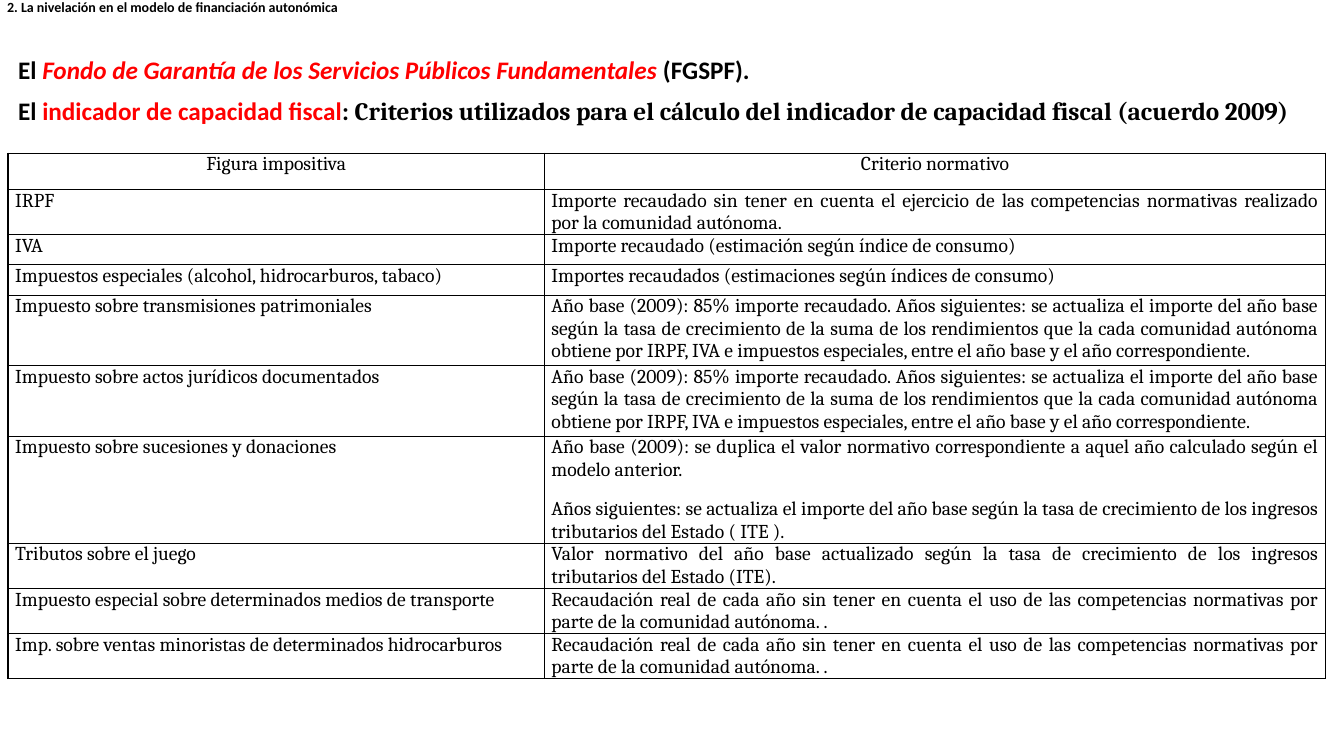
from lxml.etree import SubElement
from pptx import Presentation
from pptx.dml.color import RGBColor
from pptx.enum.text import MSO_ANCHOR, MSO_AUTO_SIZE, PP_ALIGN
from pptx.oxml.ns import qn
from pptx.util import Pt

PX = 9144  # 100 px to the inch
BLACK, RED = "000000", "FF0000"

COLUMN_WIDTHS = [532, 775]
ROW_HEIGHTS = [36, 43, 30, 30, 70, 70, 84, 44, 43, 32]
BASE_YEAR = (
    "Año base (2009): 85% importe recaudado. Años siguientes: se actualiza el importe "
    "del año base según la tasa de crecimiento de la suma de los rendimientos que la cada "
    "comunidad autónoma obtiene por IRPF, IVA e impuestos especiales, entre el año base "
    "y el año correspondiente."
)
ACTUAL_REVENUE = (
    "Recaudación real de cada año sin tener en cuenta el uso de las competencias "
    "normativas por parte de la comunidad autónoma. ."
)
# Each tax with the paragraphs of its criterion
TAX_CRITERIA = [
    ("Figura impositiva", ["Criterio normativo"]),
    ("IRPF", ["Importe recaudado sin tener en cuenta el ejercicio de las competencias "
              "normativas realizado por la comunidad autónoma."]),
    ("IVA", ["Importe recaudado (estimación según índice de consumo) "]),
    ("Impuestos especiales (alcohol, hidrocarburos, tabaco)",
     ["Importes recaudados (estimaciones según índices de consumo)"]),
    ("Impuesto sobre transmisiones patrimoniales", [BASE_YEAR]),
    ("Impuesto sobre actos jurídicos documentados", [BASE_YEAR]),
    ("Impuesto sobre sucesiones y donaciones",
     ["Año base (2009): se duplica el valor normativo correspondiente a aquel año "
      "calculado según el modelo anterior.",
      "Años siguientes: se actualiza el importe del año base según la tasa de crecimiento "
      "de los ingresos tributarios del Estado ( ITE )."]),
    ("Tributos sobre el juego",
     ["Valor normativo del año base actualizado según la tasa de crecimiento de los "
      "ingresos tributarios del Estado (ITE)."]),
    ("Impuesto especial sobre determinados medios de transporte", [ACTUAL_REVENUE]),
    ("Imp. sobre ventas minoristas de determinados hidrocarburos", [ACTUAL_REVENUE]),
]


def color(value):
    return RGBColor.from_string(value)


def add_text(paragraph, text, size=18, font="Calibri", fill=BLACK, bold=False, italic=False):
    run = paragraph.add_run()
    run.text = text
    run.font.size = Pt(size)
    run.font.name = font
    run.font.color.rgb = color(fill)
    run.font.bold = bold
    run.font.italic = italic


def format_paragraph(paragraph, align=PP_ALIGN.LEFT, before=0, after=0, line=1.0):
    paragraph.alignment = align
    paragraph.space_before = Pt(before)
    paragraph.space_after = Pt(after)
    paragraph.line_spacing = line


def place(shape, left, top, width, height, anchor):
    shape.left, shape.top = left * PX, top * PX
    shape.width, shape.height = width * PX, height * PX
    frame = shape.text_frame
    frame.word_wrap = True
    frame.auto_size = MSO_AUTO_SIZE.NONE
    frame.vertical_anchor = anchor
    return frame


def build_title(slide, *box):
    paragraph = place(slide.shapes.title, *box, MSO_ANCHOR.MIDDLE).paragraphs[0]
    format_paragraph(paragraph, line=0.9)
    add_text(paragraph, "2. La nivelación en el modelo de financiación autonómica",
             size=10, bold=True)


def build_headings(slide, *box):
    frame = place(slide.placeholders[1], *box, MSO_ANCHOR.TOP)
    headings = [
        [("El ", {}),
         ("Fondo de Garantía de los Servicios Públicos Fundamentales ",
          {"fill": RED, "italic": True}),
         ("(FGSPF).", {})],
        [("El ", {}),
         ("indicador de capacidad fiscal", {"fill": RED}),
         (": ", {}),
         ("Criterios utilizados para el cálculo del indicador de capacidad fiscal "
          "(acuerdo 2009)", {"font": "Cambria"})],
    ]
    for index, runs in enumerate(headings):
        paragraph = frame.add_paragraph() if index else frame.paragraphs[0]
        format_paragraph(paragraph, before=10, line=0.9)
        # No bullet and no hanging indent
        properties = paragraph._p.get_or_add_pPr()
        properties.set("marL", "0")
        properties.set("indent", "0")
        SubElement(properties, qn("a:buNone"))
        for text, style in runs:
            add_text(paragraph, text, bold=True, **style)


def add_borders(cell):
    properties = cell._tc.get_or_add_tcPr()
    for side in ("lnL", "lnR", "lnT", "lnB"):
        line = SubElement(properties, qn(f"a:{side}"), w=str(Pt(1)))
        fill = SubElement(line, qn("a:solidFill"))
        SubElement(fill, qn("a:srgbClr"), val=BLACK)


def fill_cell(cell, texts, align):
    cell.margin_left = cell.margin_right = 7 * PX
    cell.margin_top = cell.margin_bottom = 0
    add_borders(cell)
    cell.fill.background()
    for index, text in enumerate(texts):
        frame = cell.text_frame
        paragraph = frame.add_paragraph() if index else frame.paragraphs[0]
        format_paragraph(paragraph, align, before=6, after=6)
        add_text(paragraph, text, size=14, font="Cambria")


def build_criteria_table(slide, left, top):
    width, height = sum(COLUMN_WIDTHS), sum(ROW_HEIGHTS)
    table = slide.shapes.add_table(len(ROW_HEIGHTS), len(COLUMN_WIDTHS), left * PX,
                                   top * PX, width * PX, height * PX).table
    table.first_row = table.horz_banding = False
    for column, column_width in zip(table.columns, COLUMN_WIDTHS):
        column.width = column_width * PX
    for index, (tax, criterion) in enumerate(TAX_CRITERIA):
        row = table.rows[index]
        row.height = ROW_HEIGHTS[index] * PX
        align = PP_ALIGN.JUSTIFY if index else PP_ALIGN.CENTER
        fill_cell(row.cells[0], [tax], align)
        fill_cell(row.cells[1], criterion, align)


def main():
    presentation = Presentation()
    presentation.slide_width, presentation.slide_height = 1333 * PX, 750 * PX
    slide = presentation.slides.add_slide(presentation.slide_layouts[1])
    build_title(slide, -3, -18, 448, 52)
    build_headings(slide, 8, 52, 1809, 1737)
    build_criteria_table(slide, 8, 152)
    presentation.save("out.pptx")


if __name__ == "__main__":
    main()
